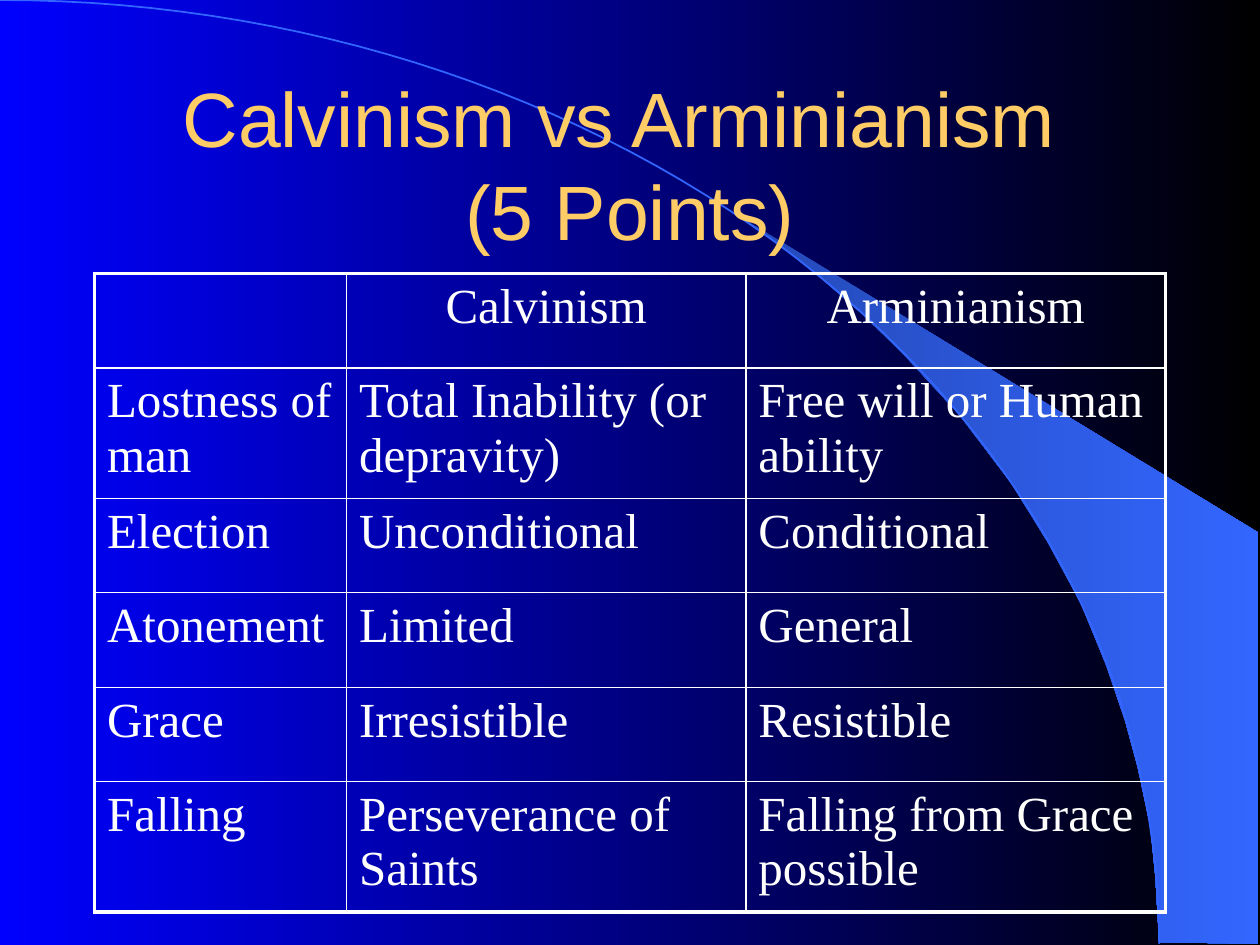
from math import cos, pi, sin

from lxml.etree import SubElement
from pptx import Presentation
from pptx.dml.color import RGBColor
from pptx.enum.text import MSO_ANCHOR, PP_ALIGN
from pptx.oxml import parse_xml
from pptx.oxml.ns import nsdecls, qn
from pptx.util import Inches, Pt

BLUE = RGBColor(0x00, 0x00, 0xFF)
BLACK = RGBColor(0x00, 0x00, 0x00)
DEEP_BLUE = RGBColor(0x24, 0x49, 0xB6)
BRIGHT_BLUE = RGBColor(0x33, 0x66, 0xFF)
GOLD = RGBColor(0xFF, 0xCC, 0x66)
WHITE = RGBColor(0xFF, 0xFF, 0xFF)

ARC_WIDTH, ARC_HEIGHT, ARC_STEPS = 9.2, 7.49, 60
BEAM = [
    (9.2, 7.48), (9.99, 7.49), (9.99, 4.23), (5.89, 1.73), (6.24, 1.99),
    (6.53, 2.22), (6.85, 2.5), (7.16, 2.8), (7.62, 3.3), (8.03, 3.84),
    (8.32, 4.31), (8.58, 4.79), (8.78, 5.28), (8.93, 5.72), (9.03, 6.09),
    (9.13, 6.56), (9.17, 6.96),
]
COLUMN_WIDTHS = [2, 3.17, 3.33]
ROW_HEIGHTS = [0.75, 1.03, 0.75, 0.75, 0.75, 1.03]
POINTS = [
    ("", "Calvinism", "Arminianism"),
    ("Lostness of man", "Total Inability (or depravity)", "Free will or Human ability"),
    ("Election", "Unconditional", "Conditional"),
    ("Atonement", "Limited", "General"),
    ("Grace", "Irresistible", "Resistible"),
    ("Falling", "Perseverance of Saints", "Falling from Grace possible"),
]


def write_text(frame, text, font="Times New Roman", size=28, color=WHITE, align=PP_ALIGN.LEFT):
    paragraph = frame.paragraphs[0]
    paragraph.text = text
    paragraph.alignment = align
    for run in paragraph.runs:
        run.font.name = font
        run.font.size = Pt(size)
        run.font.color.rgb = color


def fill_gradient(fill, *colors):
    fill.gradient()
    fill.gradient_angle = 0
    for stop, color in zip(fill.gradient_stops, colors):
        stop.color.rgb = color


class SlideBuilder:
    """Draws styled elements on the current slide."""

    thin, thick = 1, 2.25

    def __init__(self, slide):
        self.slide = slide

    def background(self, *colors):
        fill_gradient(self.slide.background.fill, *colors)

    def outline(self, points, close):
        corners = [(Inches(x), Inches(y)) for x, y in points]
        builder = self.slide.shapes.build_freeform(*corners[0], scale=1.0)
        builder.add_line_segments(corners[1:], close=close)
        shape = builder.convert_to_shape()
        shape.shadow.inherit = False
        return shape

    def beam(self, points, *colors):
        shape = self.outline(points, close=True)
        fill_gradient(shape.fill, *colors)
        shape.line.fill.background()

    def arc(self, width, height, color):
        angles = [pi / 2 * step / ARC_STEPS for step in range(ARC_STEPS + 1)]
        points = [(width * sin(angle), height * (1 - cos(angle))) for angle in angles]
        shape = self.outline(points, close=False)
        shape.fill.background()
        shape.line.color.rgb = color
        shape.line.width = Pt(self.thin)

    def title(self, text, left, top, width, height):
        box = self.slide.shapes.add_textbox(Inches(left), Inches(top), Inches(width), Inches(height))
        box.text_frame.word_wrap = True
        box.text_frame.vertical_anchor = MSO_ANCHOR.MIDDLE
        write_text(box.text_frame, text, font="Arial", size=44, color=GOLD, align=PP_ALIGN.CENTER)

    def border(self, cell, outer_edges):
        properties = cell._tc.get_or_add_tcPr()
        for index, (side, outer) in enumerate(zip("LRTB", outer_edges)):
            width = Pt(self.thick if outer else self.thin)
            line = parse_xml(f'<a:ln{side} {nsdecls("a")} w="{width}"/>')
            fill = SubElement(line, qn("a:solidFill"))
            SubElement(fill, qn("a:srgbClr"), val=str(WHITE))
            properties.insert(index, line)

    def table(self, rows, left, top, widths, heights):
        table = self.slide.shapes.add_table(
            len(rows), len(widths), Inches(left), Inches(top),
            Inches(sum(widths)), Inches(sum(heights)),
        ).table
        table.first_row = table.horz_banding = False
        for column, width in zip(table.columns, widths):
            column.width = Inches(width)
        last_row, last_column = len(rows) - 1, len(widths) - 1
        for r, texts in enumerate(rows):
            table.rows[r].height = Inches(heights[r])
            for c, text in enumerate(texts):
                cell = table.cell(r, c)
                cell.fill.background()
                align = PP_ALIGN.CENTER if r == 0 else PP_ALIGN.LEFT
                write_text(cell.text_frame, text, align=align)
                self.border(cell, (c == 0, c == last_column, r == 0, r == last_row))


def main():
    presentation = Presentation()
    presentation.slide_width, presentation.slide_height = Inches(10), Inches(7.5)
    builder = SlideBuilder(presentation.slides.add_slide(presentation.slide_layouts[6]))
    builder.background(BLUE, BLACK)
    builder.beam(BEAM, DEEP_BLUE, BRIGHT_BLUE)
    builder.arc(ARC_WIDTH, ARC_HEIGHT, BRIGHT_BLUE)
    builder.title("Calvinism vs Arminianism \v(5 Points)", 0.75, 0.67, 8.5, 1.25)
    builder.table(POINTS, 0.75, 2.17, COLUMN_WIDTHS, ROW_HEIGHTS)
    presentation.save("out.pptx")


if __name__ == "__main__":
    main()
